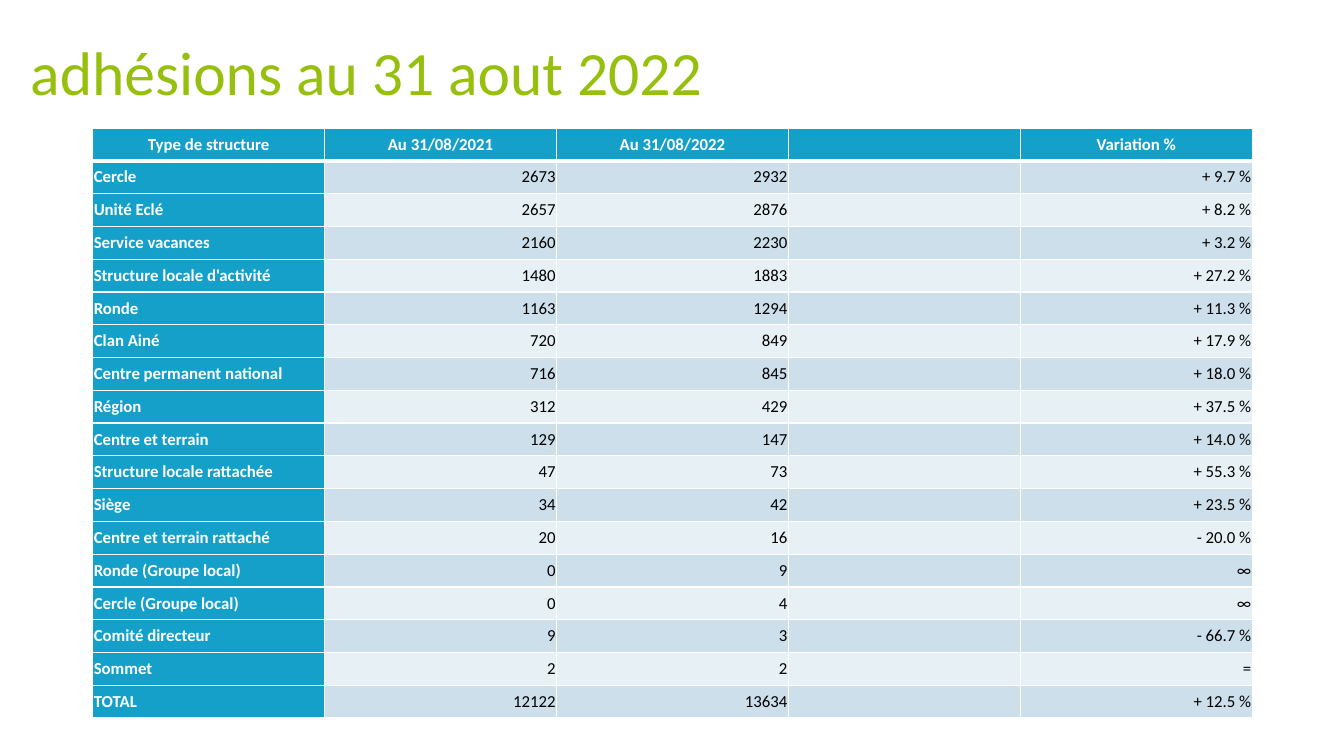
from dataclasses import dataclass

from lxml import etree
from pptx import Presentation
from pptx.dml.color import RGBColor
from pptx.enum import text
from pptx.oxml import ns
from pptx.util import Inches, Pt


@dataclass(frozen=True)
class Theme:
    font: str = "Calibri"
    title_color: str = "97BF0D"
    header_fill: str = "14A0C8"
    band_fills: tuple = ("E7F0F5", "CCDFEB")  # even rows, odd rows
    light: str = "FFFFFF"
    dark: str = "000000"
    title_size: int = 44
    table_size: int = 12
    thin_rule: int = 1
    header_rule: int = 3
    cell_inset: float = 0.01


THEME = Theme()

HEADINGS = ("Type de structure", "Au 31/08/2021", "Au 31/08/2022", "", "Variation %")
MEMBERSHIPS = (
    ("Cercle", "2673", "2932", "", "+ 9.7 %"),
    ("Unité Eclé", "2657", "2876", "", "+ 8.2 %"),
    ("Service vacances", "2160", "2230", "", "+ 3.2 %"),
    ("Structure locale d'activité", "1480", "1883", "", "+ 27.2 %"),
    ("Ronde", "1163", "1294", "", "+ 11.3 %"),
    ("Clan Ainé", "720", "849", "", "+ 17.9 %"),
    ("Centre permanent national", "716", "845", "", "+ 18.0 %"),
    ("Région", "312", "429", "", "+ 37.5 %"),
    ("Centre et terrain", "129", "147", "", "+ 14.0 %"),
    ("Structure locale rattachée", "47", "73", "", "+ 55.3 %"),
    ("Siège", "34", "42", "", "+ 23.5 %"),
    ("Centre et terrain rattaché", "20", "16", "", "- 20.0 %"),
    ("Ronde (Groupe local)", "0", "9", "", "∞"),
    ("Cercle (Groupe local)", "0", "4", "", "∞"),
    ("Comité directeur", "9", "3", "", "- 66.7 %"),
    ("Sommet", "2", "2", "", "="),
    ("TOTAL", "12122", "13634", "", "+ 12.5 %"),
)


def style_runs(paragraph, size, color, bold=False):
    for run in paragraph.runs:
        run.font.name = THEME.font
        run.font.size = Pt(size)
        run.font.bold = bold
        run.font.color.rgb = RGBColor.from_string(color)


def set_borders(cell, row):
    """Rule every side in white, with a heavier line under the header."""
    heavy_side = {0: "lnB", 1: "lnT"}.get(row)
    properties = cell._tc.get_or_add_tcPr()
    for position, side in enumerate(("lnL", "lnR", "lnT", "lnB")):
        width = THEME.header_rule if side == heavy_side else THEME.thin_rule
        line = etree.Element(ns.qn(f"a:{side}"), w=str(Pt(width)))
        fill = etree.SubElement(line, ns.qn("a:solidFill"))
        etree.SubElement(fill, ns.qn("a:srgbClr"), val=THEME.light)
        properties.insert(position, line)


def format_cell(cell, row, column):
    is_heading = row == 0 or column == 0
    cell.margin_left = cell.margin_right = Inches(THEME.cell_inset)
    cell.margin_top = cell.margin_bottom = Inches(THEME.cell_inset)
    cell.vertical_anchor = text.MSO_ANCHOR.MIDDLE
    cell.fill.solid()
    fill = THEME.header_fill if is_heading else THEME.band_fills[row % 2]
    cell.fill.fore_color.rgb = RGBColor.from_string(fill)
    set_borders(cell, row)

    paragraph = cell.text_frame.paragraphs[0]
    if row == 0:
        paragraph.alignment = text.PP_ALIGN.CENTER
    elif column == 0:
        paragraph.alignment = text.PP_ALIGN.LEFT
    else:
        paragraph.alignment = text.PP_ALIGN.RIGHT
    color = THEME.light if is_heading else THEME.dark
    style_runs(paragraph, THEME.table_size, color, bold=is_heading)


def add_title(slide, left, top, width, height):
    title = slide.shapes.title
    title.left, title.top = Inches(left), Inches(top)
    title.width, title.height = Inches(width), Inches(height)
    frame = title.text_frame
    frame.text = "adhésions au 31 aout 2022"
    frame.word_wrap = True
    frame.vertical_anchor = text.MSO_ANCHOR.MIDDLE
    paragraph = frame.paragraphs[0]
    paragraph.alignment = text.PP_ALIGN.LEFT
    paragraph.line_spacing = 0.9
    style_runs(paragraph, THEME.title_size, THEME.title_color)


def add_membership_table(slide, left, top, width, height):
    rows = (HEADINGS, *MEMBERSHIPS)
    table = slide.shapes.add_table(
        len(rows), len(HEADINGS),
        Inches(left), Inches(top), Inches(width), Inches(height),
    ).table
    table.first_col = True
    for row, values in enumerate(rows):
        for column, value in enumerate(values):
            cell = table.cell(row, column)
            if value:
                cell.text_frame.text = value
            format_cell(cell, row, column)


def main():
    presentation = Presentation()
    presentation.slide_width = Inches(13.33)
    presentation.slide_height = Inches(7.5)
    slide = presentation.slides.add_slide(presentation.slide_layouts[5])

    # Title
    add_title(slide, 0.2, 0.01, 11.82, 1.47)
    # Memberships by type of structure
    add_membership_table(slide, 0.92, 1.27, 11.5, 5.86)

    presentation.save("out.pptx")


if __name__ == "__main__":
    main()
